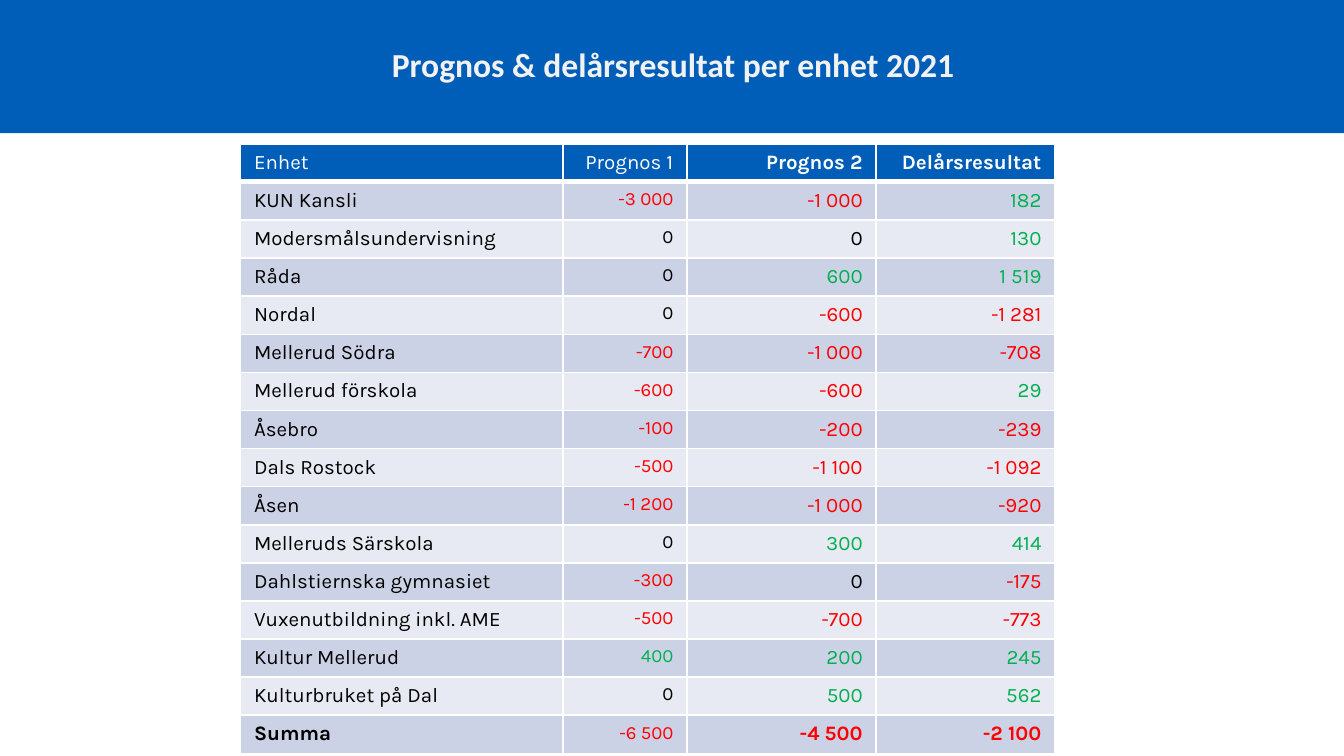
import pptx
import pptx.dml.color
import pptx.enum.shapes
import pptx.enum.text
import pptx.oxml
import pptx.oxml.ns
import pptx.util
from pptx.util import Inches

BLUE, WHITE, BLACK = "005EB8", "FFFFFF", "000000"
RED, GREEN = "FF0000", "00B050"
ROW_FILLS = ("CCD2E6", "E7EAF3")
COLUMN_WIDTHS = (2.4, 0.92, 1.41, 1.33)
TABLE_HEIGHT = 4.54

HEADINGS = ("Enhet", "Prognos 1", "Prognos 2", "Delårsresultat")
UNITS = (
    ("KUN Kansli", -3000, -1000, 182),
    ("Modersmålsundervisning", 0, 0, 130),
    ("Råda", 0, 600, 1519),
    ("Nordal", 0, -600, -1281),
    ("Mellerud Södra", -700, -1000, -708),
    ("Mellerud förskola", -600, -600, 29),
    ("Åsebro", -100, -200, -239),
    ("Dals Rostock", -500, -1100, -1092),
    ("Åsen", -1200, -1000, -920),
    ("Melleruds Särskola", 0, 300, 414),
    ("Dahlstiernska gymnasiet", -300, 0, -175),
    ("Vuxenutbildning inkl. AME", -500, -700, -773),
    ("Kultur Mellerud", 400, 200, 245),
    ("Kulturbruket på Dal", 0, 500, 562),
    ("Summa", -6500, -4500, -2100),
)


def rgb(value):
    return pptx.dml.color.RGBColor.from_string(value)


def format_font(font, name, size, color, bold):
    font.name = name
    font.size = pptx.util.Pt(size)
    font.color.rgb = rgb(color)
    font.bold = bold


def add_band(slide):
    """Add the full-width band behind everything else."""
    band = slide.shapes.add_shape(
        pptx.enum.shapes.MSO_SHAPE.RECTANGLE, 0, 0, Inches(10), Inches(0.99))
    band.shadow.inherit = False
    band.fill.solid()
    band.fill.fore_color.rgb = rgb(BLUE)
    band.line.fill.background()
    slide.shapes.title._element.addprevious(band._element)


def set_title(slide, text):
    title = slide.shapes.title
    title.left, title.top = Inches(2.81), Inches(0.28)
    title.width, title.height = Inches(4.4), Inches(0.4)
    frame = title.text_frame
    frame.text = text
    frame.word_wrap = False
    frame.vertical_anchor = pptx.enum.text.MSO_ANCHOR.MIDDLE
    paragraph = frame.paragraphs[0]
    paragraph.alignment = pptx.enum.text.PP_ALIGN.CENTER
    format_font(paragraph.runs[0].font, "Calibri", 18, "F2F2F2", True)


def set_borders(cell, top, bottom):
    """Draw white borders; top and bottom are widths in points."""
    properties = cell._tc.get_or_add_tcPr()
    for side, width in (("L", 1), ("R", 1), ("T", top), ("B", bottom)):
        properties.append(pptx.oxml.parse_xml(
            f'<a:ln{side} {pptx.oxml.ns.nsdecls("a")} w="{pptx.util.Pt(width)}">'
            f'<a:solidFill><a:srgbClr val="{WHITE}"/></a:solidFill></a:ln{side}>'))


def set_cell(cell, text, fill, size, color, bold, align_right):
    cell.fill.solid()
    cell.fill.fore_color.rgb = rgb(fill)
    cell.text_frame.text = text
    paragraph = cell.text_frame.paragraphs[0]
    if align_right:
        paragraph.alignment = pptx.enum.text.PP_ALIGN.RIGHT
    format_font(paragraph.runs[0].font, "Karla", size, color, bold)


def amount_text(amount):
    return f"{amount:,}".replace(",", " ")


def amount_color(amount):
    if amount == 0:
        return BLACK
    return GREEN if amount > 0 else RED


def add_result_table(slide):
    rows = (HEADINGS,) + UNITS
    table = slide.shapes.add_table(
        len(rows), len(HEADINGS), Inches(1.79), Inches(1.07),
        Inches(sum(COLUMN_WIDTHS)), Inches(TABLE_HEIGHT)).table
    for column, width in zip(table.columns, COLUMN_WIDTHS):
        column.width = Inches(width)
    for row_index, values in enumerate(rows):
        is_header = row_index == 0
        is_total = row_index == len(rows) - 1
        table.rows[row_index].height = Inches(TABLE_HEIGHT / len(rows))
        fill = BLUE if is_header else ROW_FILLS[(row_index - 1) % 2]
        for column_index, value in enumerate(values):
            cell = table.cell(row_index, column_index)
            set_borders(cell, 3 if row_index == 1 else 1, 3 if is_header else 1)
            if is_header:
                text, color, bold = value, WHITE, column_index > 1
            else:
                is_name = column_index == 0
                text = value if is_name else amount_text(value)
                color = BLACK if is_name else amount_color(value)
                bold = is_total and column_index != 1
            size = 10 if column_index == 1 and not is_header else 11
            set_cell(cell, text, fill, size, color, bold, column_index > 0)


def main():
    deck = pptx.Presentation()
    deck.slide_width = Inches(10)
    deck.slide_height = deck.slide_width * 9 // 16
    slide = deck.slides.add_slide(deck.slide_layouts.get_by_name("Title Only"))
    add_band(slide)
    set_title(slide, "Prognos & delårsresultat per enhet 2021")
    add_result_table(slide)
    deck.save("out.pptx")


if __name__ == "__main__":
    main()
